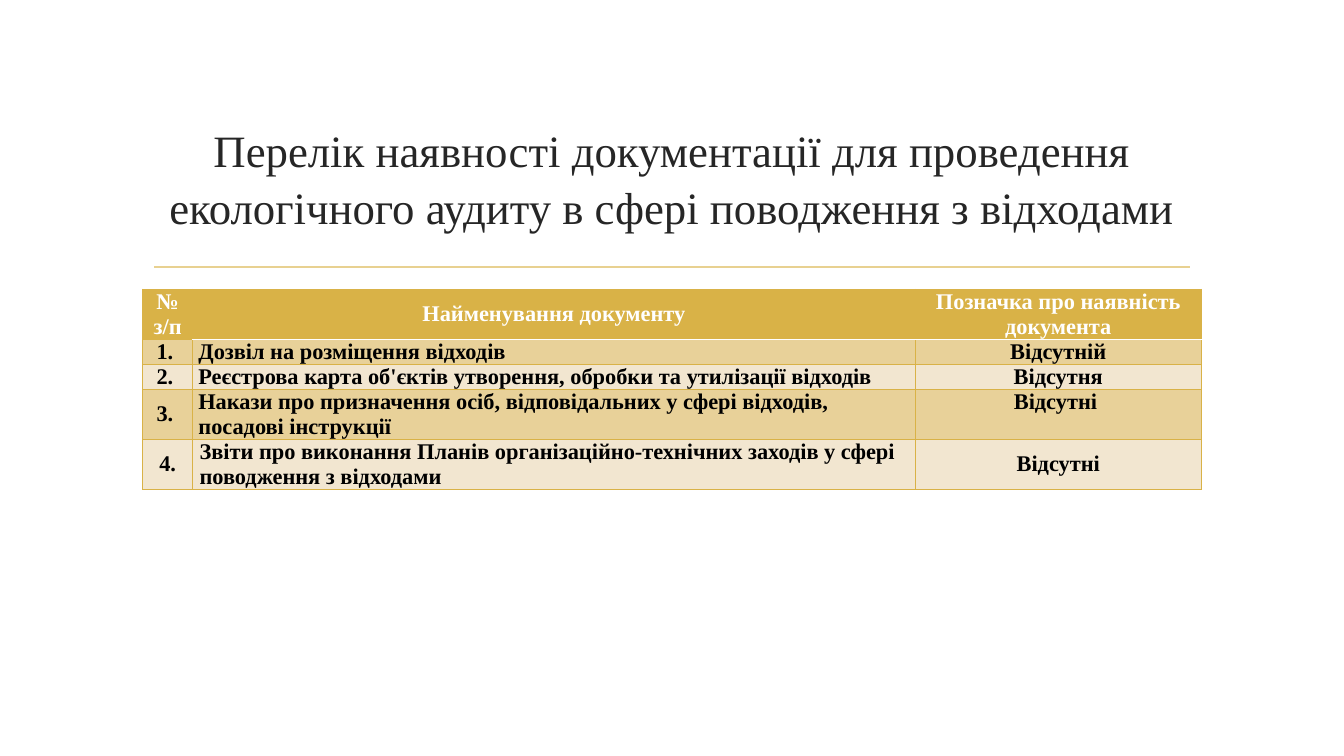
from dataclasses import dataclass

from lxml import etree
from pptx import Presentation
from pptx.dml.color import RGBColor
from pptx.enum.shapes import MSO_CONNECTOR
from pptx.enum.text import MSO_ANCHOR, MSO_AUTO_SIZE, PP_ALIGN
from pptx.oxml.ns import qn
from pptx.util import Cm, Pt

LEFT, CENTER = PP_ALIGN.LEFT, PP_ALIGN.CENTER
TOP, MIDDLE = MSO_ANCHOR.TOP, MSO_ANCHOR.MIDDLE
STRAIGHT = MSO_CONNECTOR.STRAIGHT
NO_FIT = MSO_AUTO_SIZE.NONE

FONT = "Times New Roman"
COLORS = {
    "title": "262626",
    "rule": "E8D191",
    "gold": "D9B247",
    "dark": "E8D199",
    "light": "F2E6D0",
    "white": "FFFFFF",
    "black": "000000",
}
TITLE = ("Перелік наявності документації для проведення "
         "екологічного аудиту в сфері поводження з відходами")
WIDTHS = (1.25, 18.22, 7.2)


@dataclass
class Row:
    texts: tuple[str, str, str]
    height: float
    fill: str
    ink: str = "black"
    mark: MSO_ANCHOR = TOP
    inset: float = 0.15


ROWS = [
    Row(("№ з/п", "Найменування документу", "Позначка про наявність документа"),
        1.26, "gold", "white", MIDDLE),
    Row(("1. ", "Дозвіл на розміщення відходів", "Відсутній"), 0.63, "dark"),
    Row(("2. ", "Реєстрова карта об'єктів утворення, обробки та утилізації відходів",
         "Відсутня"), 0.63, "light"),
    Row(("3. ", "Накази про призначення осіб, відповідальних у сфері відходів, "
         "посадові інструкції", "Відсутні "), 1.26, "dark"),
    Row(("4.", "Звіти про виконання Планів організаційно-технічних заходів у сфері "
         "поводження з відходами", "Відсутні"), 1.26, "light", mark=MIDDLE, inset=0.18),
]


def rgb(name: str) -> RGBColor:
    return RGBColor.from_string(COLORS[name])


def add_run(para, text: str, size: float, ink: str, bold: bool = False) -> None:
    run = para.add_run()
    run.text = text
    run.font.name = FONT
    run.font.size = Pt(size)
    run.font.bold = bold
    run.font.color.rgb = rgb(ink)


def add_edge(cell, side: str, color: str, width: float) -> None:
    """Draw one border; call before the cell is filled, as the schema orders it so."""
    props = cell._tc.get_or_add_tcPr()
    line = etree.SubElement(props, qn(f"a:ln{side}"), w=str(Pt(width)))
    fill = etree.SubElement(line, qn("a:solidFill"))
    etree.SubElement(fill, qn("a:srgbClr"), val=COLORS[color])


def add_title(slide) -> None:
    title = slide.shapes.title
    title.left, title.top = Cm(3.6), Cm(2.9)
    title.width, title.height = Cm(26.67), Cm(3.63)
    frame = title.text_frame
    frame.word_wrap = True
    frame.auto_size = NO_FIT
    frame.vertical_anchor = TOP
    para = frame.paragraphs[0]
    para.alignment = CENTER
    para.line_spacing = 1.05
    add_run(para, TITLE, 32, "title")


def add_rule(slide) -> None:
    rule = slide.shapes.add_connector(STRAIGHT, Cm(3.89), Cm(6.73), Cm(30), Cm(6.73))
    rule.line.color.rgb = rgb("rule")
    rule.line.width = Pt(1.25)
    etree.SubElement(rule._element.spPr, qn("a:effectLst"))


def fill_cell(cell, row: Row, r: int, c: int) -> None:
    for side in "LRTB":
        white = c > 0 and (r, side) in ((0, "B"), (1, "T"))
        add_edge(cell, side, *(("white", 1.25) if white else ("gold", 0.75)))
    cell.fill.solid()
    cell.fill.fore_color.rgb = rgb(row.fill)
    cell.margin_left = cell.margin_right = Cm(row.inset)
    cell.margin_top = cell.margin_bottom = 0
    cell.vertical_anchor = row.mark if c == 2 else MIDDLE
    para = cell.text_frame.paragraphs[0]
    para.alignment = LEFT if c == 1 and r > 0 else CENTER
    add_run(para, row.texts[c], 16, row.ink, True)


def add_grid(slide) -> None:
    high = sum(row.height for row in ROWS)
    table = slide.shapes.add_table(len(ROWS), len(WIDTHS), Cm(3.6), Cm(7.29),
                                   Cm(sum(WIDTHS)), Cm(high)).table
    table.first_row = table.horz_banding = False
    for col, width in zip(table.columns, WIDTHS):
        col.width = Cm(width)
    for r, row in enumerate(ROWS):
        table.rows[r].height = Cm(row.height)
        for c in range(len(WIDTHS)):
            fill_cell(table.cell(r, c), row, r, c)


def main() -> None:
    deck = Presentation()
    deck.slide_width, deck.slide_height = Cm(33.87), Cm(19.05)
    slide = deck.slides.add_slide(deck.slide_layouts[5])
    add_rule(slide)
    add_title(slide)
    add_grid(slide)
    deck.save("out.pptx")


if __name__ == "__main__":
    main()
